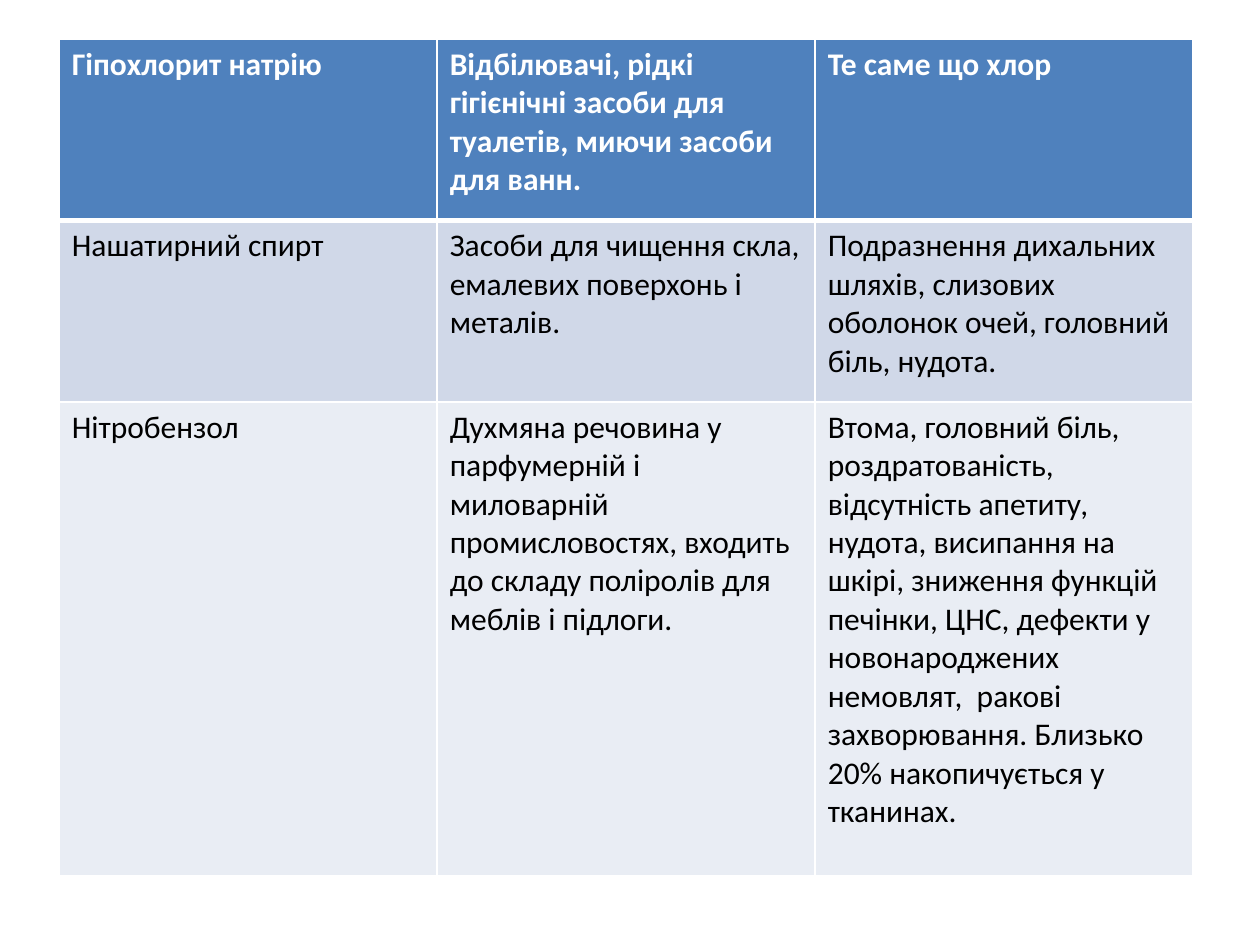
from dataclasses import dataclass

from lxml import etree
from pptx import Presentation
from pptx.dml.color import RGBColor
from pptx.oxml.ns import qn
from pptx.util import Inches, Pt

ROWS = [
    (
        "Гіпохлорит натрію",
        "Відбілювачі, рідкі гігієнічні засоби для туалетів, миючи засоби для ванн.",
        "Те саме що хлор",
    ),
    (
        "Нашатирний спирт",
        "Засоби для чищення скла, емалевих поверхонь і металів.",
        "Подразнення дихальних шляхів, слизових оболонок очей, головний біль, нудота.",
    ),
    (
        "Нітробензол",
        "Духмяна речовина у парфумерній і миловарній промисловостях, "
        "входить до складу поліролів для меблів і підлоги.",
        "Втома, головний біль, роздратованість, відсутність апетиту, нудота, "
        "висипання на шкірі, зниження функцій печінки, ЦНС, дефекти у "
        "новонароджених немовлят,  ракові захворювання. "
        "Близько 20% накопичується у тканинах. ",
    ),
]
ROW_HEIGHTS = [1.44, 1.44, 3.76]
COLUMN_WIDTH = 3
TABLE_LEFT, TABLE_TOP = 0.47, 0.31


@dataclass(frozen=True)
class Theme:
    font: str = "Calibri"
    size: int = 18
    header_text: str = "FFFFFF"
    body_text: str = "000000"
    row_fills: tuple = ("4F81BD", "D0D8E8", "E9EDF4")
    border: str = "FFFFFF"
    thin: int = 1
    thick: int = 3


THEME = Theme()


def write_text(cell, text, *, color, bold=False):
    span = cell.text_frame.paragraphs[0].add_run()
    span.text = text
    span.font.name = THEME.font
    span.font.size = Pt(THEME.size)
    span.font.bold = bold
    span.font.color.rgb = RGBColor.from_string(color)


def set_borders(cell, *, top, bottom):
    properties = cell._tc.get_or_add_tcPr()
    widths = {"lnL": THEME.thin, "lnR": THEME.thin, "lnT": top, "lnB": bottom}
    for index, (side, width) in enumerate(widths.items()):
        line = etree.Element(qn(f"a:{side}"), w=str(Pt(width)))
        fill = etree.SubElement(line, qn("a:solidFill"))
        etree.SubElement(fill, qn("a:srgbClr"), val=THEME.border)
        properties.insert(index, line)


def add_substance_table(page):
    column_count = len(ROWS[0])
    table = page.shapes.add_table(
        len(ROWS), column_count,
        Inches(TABLE_LEFT), Inches(TABLE_TOP),
        Inches(COLUMN_WIDTH * column_count), Inches(sum(ROW_HEIGHTS)),
    ).table
    for column in table.columns:
        column.width = Inches(COLUMN_WIDTH)
    for row_index, texts in enumerate(ROWS):
        table.rows[row_index].height = Inches(ROW_HEIGHTS[row_index])
        is_header = row_index == 0
        for column_index, text in enumerate(texts):
            cell = table.cell(row_index, column_index)
            cell.fill.solid()
            cell.fill.fore_color.rgb = RGBColor.from_string(THEME.row_fills[row_index])
            set_borders(
                cell,
                top=THEME.thick if row_index == 1 else THEME.thin,
                bottom=THEME.thick if is_header else THEME.thin,
            )
            color = THEME.header_text if is_header else THEME.body_text
            write_text(cell, text, color=color, bold=is_header)


def main():
    deck = Presentation()
    deck.slide_width, deck.slide_height = Inches(10), Inches(7.5)
    page = deck.slides.add_slide(deck.slide_layouts[6])
    add_substance_table(page)
    deck.save("out.pptx")


if __name__ == "__main__":
    main()
